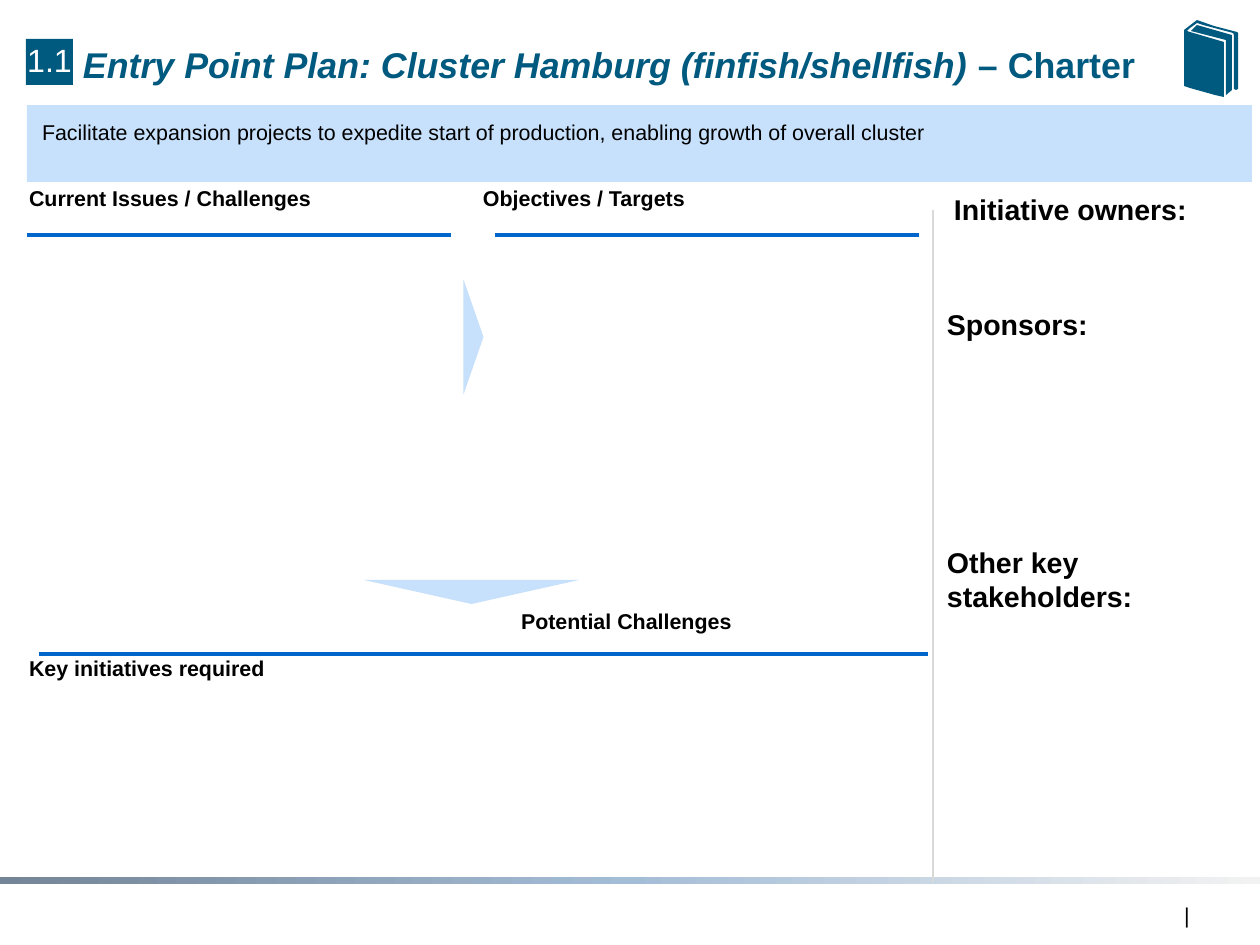
from copy import deepcopy

from lxml import etree
from pptx import Presentation
from pptx import util as u
from pptx.dml.color import RGBColor
from pptx.enum import shapes, text
from pptx.oxml.ns import qn

PX = 7110  # EMU in one px
SLIDE_SIZE = (1260, 945)
TEAL, PALE, BLUE, GREY, BLACK, WHITE = "00597E", "C7E0FB", "0066CC", "D9D9D9", "000000", "FFFFFF"

TITLE = ("Entry Point Plan: Cluster Hamburg (finfish/shellfish) ", "– Charter")
TITLE_BOX = (83, 43, 1085, 44)
BADGE, BADGE_BOX = "1.1", (26, 39, 47, 46)
BANNER_BOX = (27, 105, 1225, 77)
FOOTER_BAR = (0, 877, 1260, 7)
FOOTER_STOPS = [(0, "748597"), (0.5, "A4BDD7"), (1, "F2F2F2")]

# text, box, size, bold, wrap
LABELS = [
    ("Facilitate expansion projects to expedite start of production, enabling growth of overall cluster",
     (42, 119, 1196, 26), 12, False, True),
    ("Current Issues / Challenges", (29, 185, 291, 26), 12, True, False),
    ("Objectives / Targets", (483, 185, 206, 26), 12, True, False),
    ("Potential Challenges", (521, 608, 213, 26), 12, True, False),
    ("Key initiatives required", (29, 655, 238, 26), 12, True, False),
    ("Initiative owners:", (954, 192, 298, 82), 16, True, True),
    ("Sponsors:", (947, 307, 143, 35), 16, True, False),
    ("Other key stakeholders:", (947, 545, 283, 69), 16, True, True),
    ("|", (1184, 902, 5, 26), 12, False, False),
]
# start, end, colour, width
LINES = [
    ((933, 882), (933, 210), GREY, 0.75),
    ((27, 235), (451, 235), BLUE, 1.75),
    ((495, 235), (919, 235), BLUE, 1.75),
    ((39, 654), (928, 654), BLUE, 1.75),
]
# unrotated box, rotation
POINTERS = [((416, 327, 115, 20), 90), ((364, 580, 215, 24), 180)]
BOOK_COVER = [(1237, 32), (1214, 26), (1197, 20), (1184, 30), (1184, 86), (1190, 88),
              (1215, 95), (1224, 97), (1224, 42), (1190, 32), (1187, 31), (1190, 28),
              (1197, 23), (1203, 25), (1233, 33), (1234, 35), (1234, 89), (1236, 90),
              (1238, 89), (1238, 33)]
BOOK_PAGES = [(1191, 31), (1226, 40), (1226, 95), (1232, 90), (1232, 35), (1197, 25)]


def emu(lengths):
    return [length * PX for length in lengths]


def colour(hex_value):
    return RGBColor.from_string(hex_value)


def format_runs(paragraph, size, hex_value, bold=False):
    for run in paragraph.runs:
        run.font.name, run.font.size, run.font.bold = "Arial", u.Pt(size), bold
        run.font.color.rgb = colour(hex_value)


def prepare_frame(frame, wrap=True, anchor=text.MSO_ANCHOR.TOP):
    frame.margin_left = frame.margin_top = frame.margin_right = frame.margin_bottom = 0
    frame.word_wrap, frame.vertical_anchor = wrap, anchor


def paint(shape, hex_value):
    shape.shadow.inherit = False
    shape.fill.solid()
    shape.fill.fore_color.rgb = colour(hex_value)
    shape.line.fill.background()
    return shape


def add_block(slide, kind, box, hex_value):
    return paint(slide.shapes.add_shape(kind, *emu(box)), hex_value)


def add_outline(slide, points, hex_value):
    builder = slide.shapes.build_freeform(*points[0], scale=PX)
    builder.add_line_segments(points[1:], close=True)
    paint(builder.convert_to_shape(), hex_value)


def add_line(slide, start, end, hex_value, width):
    line = slide.shapes.add_connector(shapes.MSO_CONNECTOR.STRAIGHT, *emu(start + end))
    line.line.color.rgb, line.line.width = colour(hex_value), u.Pt(width)
    etree.SubElement(line._element.spPr, qn("a:effectLst"))


def add_label(slide, words, box, size, bold, wrap):
    frame = slide.shapes.add_textbox(*emu(box)).text_frame
    prepare_frame(frame, wrap)
    frame.text = words
    format_runs(frame.paragraphs[0], size, BLACK, bold)


def add_footer_bar(slide):
    bar = add_block(slide, shapes.MSO_SHAPE.RECTANGLE, FOOTER_BAR, GREY)
    bar.fill.gradient()
    bar.fill.gradient_angle = 0
    stop_list = bar._element.spPr.find(".//" + qn("a:gsLst"))
    stop_list.append(deepcopy(stop_list[0]))
    for stop, (position, hex_value) in zip(bar.fill.gradient_stops, FOOTER_STOPS):
        stop.position, stop.color.rgb = position, colour(hex_value)


def set_title(slide):
    title = slide.shapes.title
    title.left, title.top, title.width, title.height = emu(TITLE_BOX)
    prepare_frame(title.text_frame)
    title.text_frame.auto_size = text.MSO_AUTO_SIZE.NONE
    paragraph = title.text_frame.paragraphs[0]
    paragraph.alignment = text.PP_ALIGN.LEFT
    for words, italic in zip(TITLE, (True, False)):
        run = paragraph.add_run()
        run.text, run.font.italic = words, italic
    format_runs(paragraph, 20, TEAL, True)


def add_badge(slide):
    badge = add_block(slide, shapes.MSO_SHAPE.RECTANGLE, BADGE_BOX, TEAL)
    prepare_frame(badge.text_frame, anchor=text.MSO_ANCHOR.MIDDLE)
    badge.text_frame.text = BADGE
    paragraph = badge.text_frame.paragraphs[0]
    paragraph.alignment, paragraph.line_spacing = text.PP_ALIGN.CENTER, 0.93
    format_runs(paragraph, 18, WHITE)


def main():
    presentation = Presentation()
    presentation.slide_width, presentation.slide_height = emu(SLIDE_SIZE)
    slide = presentation.slides.add_slide(presentation.slide_layouts[5])
    add_footer_bar(slide)
    set_title(slide)
    add_badge(slide)
    add_block(slide, shapes.MSO_SHAPE.RECTANGLE, BANNER_BOX, PALE)
    for line in LINES:
        add_line(slide, *line)
    for box, rotation in POINTERS:
        add_block(slide, shapes.MSO_SHAPE.ISOSCELES_TRIANGLE, box, PALE).rotation = rotation
    for points in (BOOK_COVER, BOOK_PAGES):
        add_outline(slide, points, TEAL)
    for label in LABELS:
        add_label(slide, *label)
    presentation.save("out.pptx")


if __name__ == "__main__":
    main()
